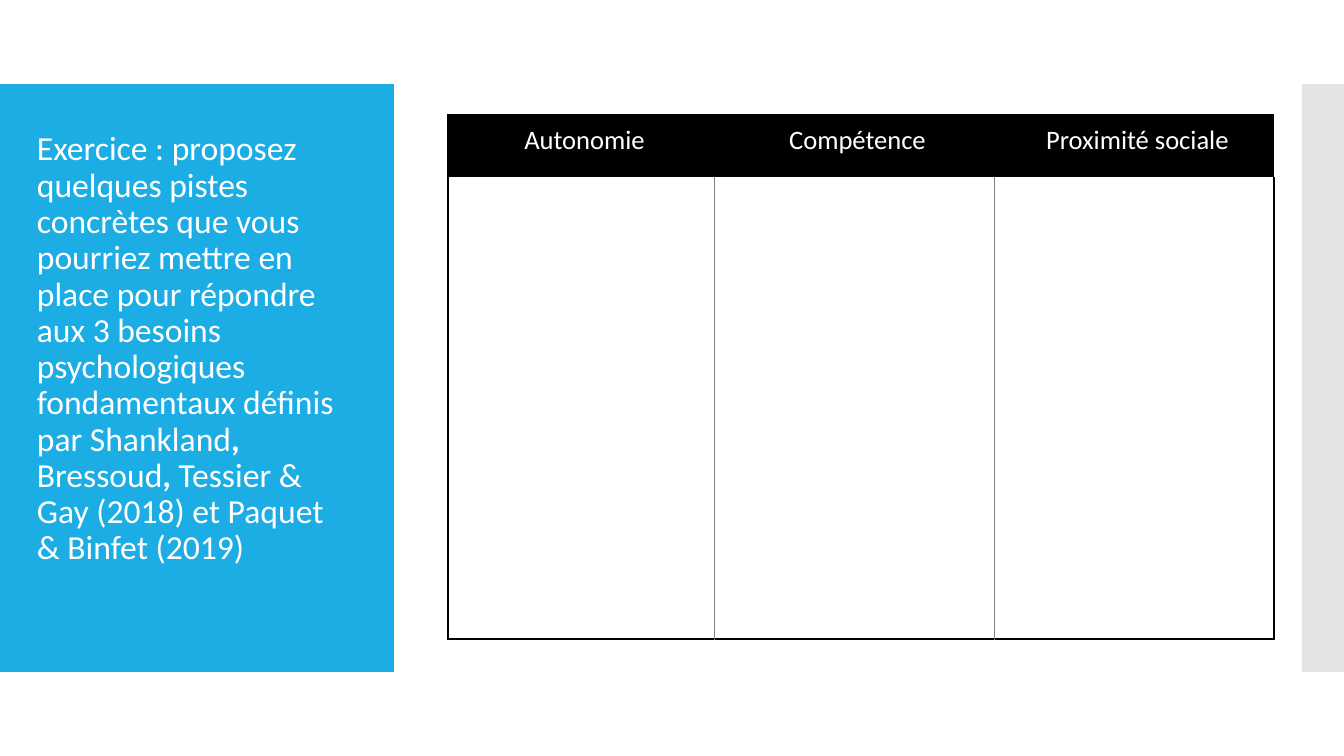
from dataclasses import dataclass

from lxml import etree
from pptx import Presentation
from pptx import util as u
from pptx.dml.color import RGBColor
from pptx.enum import shapes, text
from pptx.oxml import ns


@dataclass(frozen=True)
class Theme:
    """Colours, font and type sizes of the slide."""
    blue: str = "1CADE4"
    grey: str = "C8C8C8"
    black: str = "000000"
    white: str = "FFFFFF"
    rule: str = "808080"
    font: str = "Calibri"
    title_size: int = 24
    header_size: int = 19


THEME = Theme()
EMU_PER_PX = 12192000 / 1344
BODY_TOP, BODY_HEIGHT = 84, 588
HEADERS = ["Autonomie", "Compétence", "Proximité sociale"]
COLUMN_WIDTHS = [266, 280, 280]
ROW_HEIGHTS = [62, 462]
EXERCISE = [
    ("Exercice\u00a0: proposez quelques pistes concrètes que vous pourriez mettre en place "
     "pour répondre aux 3 besoins psychologiques fondamentaux définis par Shankland", False),
    (", ", True),
    ("Bressoud", False),
    (", ", True),
    ("Tessier & Gay (2018) et Paquet & Binfet (2019)", False),
]


def px(length):
    """Turn pixels into EMU."""
    return u.Emu(round(length * EMU_PER_PX))


def add_panel(slide, left, top, width, height, color, opacity=100):
    """Add a plain rectangle without outline."""
    shape = slide.shapes.add_shape(
        shapes.MSO_SHAPE.RECTANGLE, px(left), px(top), px(width), px(height))
    shape.shadow.inherit = False
    shape.line.fill.background()
    shape.fill.solid()
    shape.fill.fore_color.rgb = RGBColor.from_string(color)
    if opacity < 100:
        color_element = shape.fill._xPr.find(".//" + ns.qn("a:srgbClr"))
        etree.SubElement(color_element, ns.qn("a:alpha"), val=str(opacity * 1000))


def write_text(frame, runs, *, size, color, align, line_spacing, space_after):
    """Write (text, bold) runs into the first paragraph of a frame."""
    paragraph = frame.paragraphs[0]
    paragraph.alignment = align
    paragraph.line_spacing = line_spacing
    paragraph.space_after = u.Pt(space_after)
    for words, bold in runs:
        run = paragraph.add_run()
        run.text = words
        run.font.name = THEME.font
        run.font.size = u.Pt(size)
        run.font.bold = bold
        run.font.color.rgb = RGBColor.from_string(color)


def add_exercise(slide):
    """Add the exercise instruction on the blue panel."""
    frame = slide.shapes.add_textbox(px(27), px(127), px(325), px(512)).text_frame
    frame.word_wrap = True
    frame.vertical_anchor = text.MSO_ANCHOR.TOP
    write_text(frame, EXERCISE, size=THEME.title_size, color=THEME.white,
               align=text.PP_ALIGN.LEFT, line_spacing=0.9, space_after=10)


def set_borders(cell, **borders):
    """Set the L, R, T and B borders of a cell; missing sides get no line."""
    properties = cell._tc.get_or_add_tcPr()
    for side in "LRTB":
        line = etree.SubElement(properties, ns.qn(f"a:ln{side}"))
        if side not in borders:
            etree.SubElement(line, ns.qn("a:noFill"))
            continue
        color, width = borders[side]
        line.set("w", str(u.Pt(width)))
        fill = etree.SubElement(line, ns.qn("a:solidFill"))
        etree.SubElement(fill, ns.qn("a:srgbClr"), val=color)


def format_header(cell, label):
    """Fill a header cell and write its label."""
    cell.fill.solid()
    cell.fill.fore_color.rgb = RGBColor.from_string(THEME.black)
    cell.vertical_anchor = text.MSO_ANCHOR.MIDDLE
    cell.margin_left, cell.margin_right = px(17), px(10)
    cell.margin_top = cell.margin_bottom = px(13)
    write_text(cell.text_frame, [(label, False)], size=THEME.header_size, color=THEME.white,
               align=text.PP_ALIGN.CENTER, line_spacing=u.Pt(15.6), space_after=7.5)


def add_needs_table(slide):
    """Add the table of the three needs with empty answer cells."""
    table = slide.shapes.add_table(
        len(ROW_HEIGHTS), len(HEADERS), px(448), px(115),
        px(sum(COLUMN_WIDTHS)), px(sum(ROW_HEIGHTS))).table
    table.horz_banding = False
    for row, height in zip(table.rows, ROW_HEIGHTS):
        row.height = px(height)
    outer, inner = (THEME.black, 1.5), (THEME.rule, 0.5)
    last = len(HEADERS) - 1
    for index, (label, width) in enumerate(zip(HEADERS, COLUMN_WIDTHS)):
        table.columns[index].width = px(width)
        header, answer = table.cell(0, index), table.cell(1, index)
        set_borders(header, T=outer, **({"L": outer} if index == 0 else {}))
        format_header(header, label)
        set_borders(answer, L=outer if index == 0 else inner,
                    R=outer if index == last else inner, B=outer)
        answer.fill.background()


def main():
    """Build and save the slide."""
    presentation = Presentation()
    presentation.slide_width, presentation.slide_height = px(1344), px(756)
    slide = presentation.slides.add_slide(presentation.slide_layouts[6])
    add_panel(slide, 0, BODY_TOP, 394, BODY_HEIGHT, THEME.blue)
    add_exercise(slide)
    add_panel(slide, 1302, BODY_TOP, 42, BODY_HEIGHT, THEME.grey, opacity=50)
    add_needs_table(slide)
    presentation.save("out.pptx")


if __name__ == "__main__":
    main()
